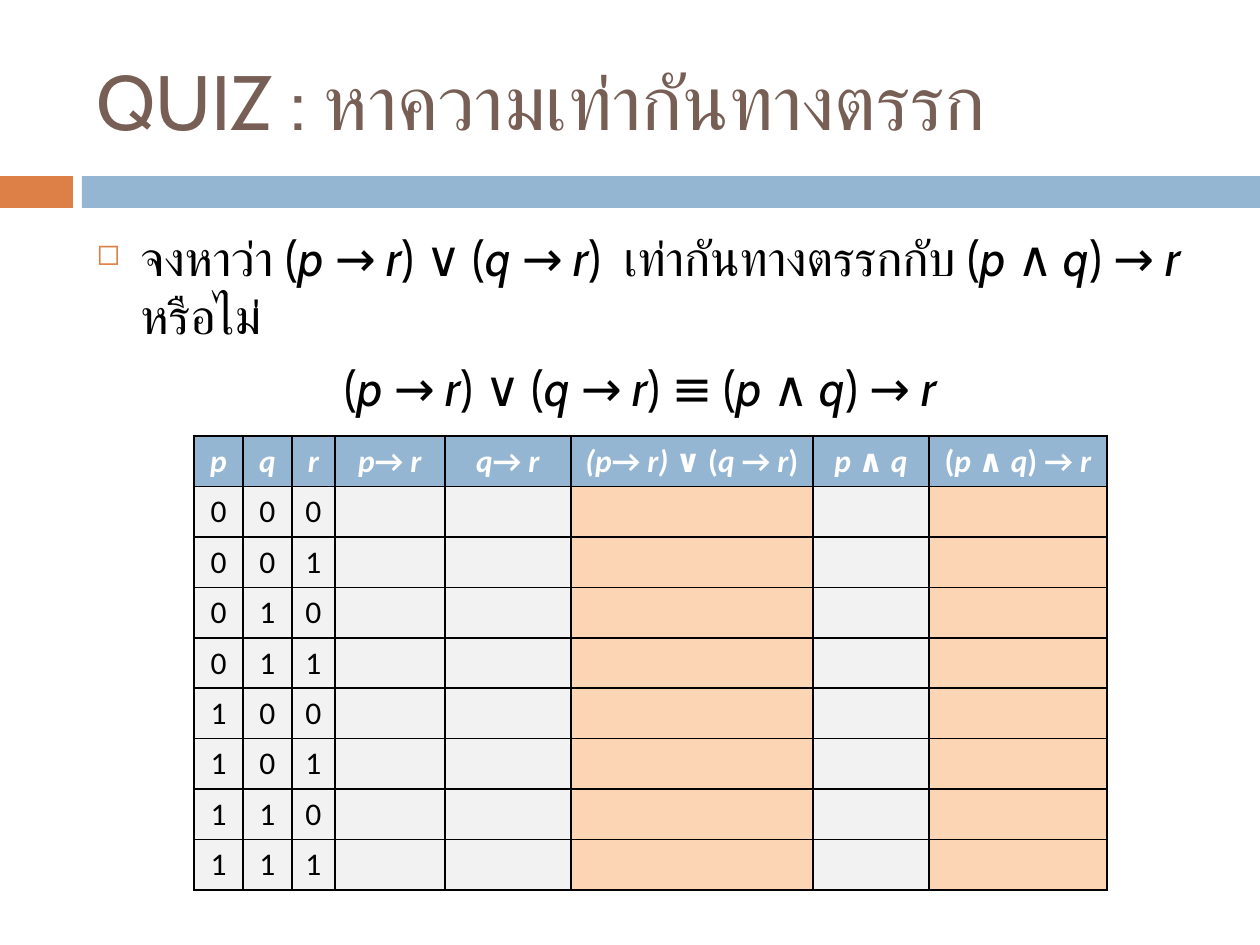
from dataclasses import dataclass
from itertools import product

from lxml import etree
from pptx import Presentation
from pptx.dml.color import RGBColor
from pptx.enum.shapes import MSO_SHAPE
from pptx.enum.text import MSO_ANCHOR, PP_ALIGN
from pptx.oxml.ns import qn
from pptx.util import Emu, Pt

RECTANGLE = MSO_SHAPE.RECTANGLE
LEFT, CENTER = PP_ALIGN.LEFT, PP_ALIGN.CENTER
TOP, MIDDLE = MSO_ANCHOR.TOP, MSO_ANCHOR.MIDDLE
PX_PER_INCH = 126
BLANK_LAYOUT = 6


@dataclass(frozen=True)
class Theme:
    orange: str = "DD8047"
    blue: str = "94B6D2"
    brown: str = "775F55"
    black: str = "000000"
    white: str = "FFFFFF"
    gray: str = "F2F2F2"
    peach: str = "FCD5B5"
    slide_font: str = "Cabin"
    table_font: str = "Calibri"
    title_size: int = 44
    body_size: int = 28
    table_size: int = 18
    border_width: int = 1


@dataclass(frozen=True)
class Box:
    left: int
    top: int
    width: int
    height: int


@dataclass(frozen=True)
class Bar:
    box: Box
    color: str


@dataclass(frozen=True)
class Column:
    header: str
    width: int
    fill: str


THEME = Theme()
BARS = (
    Bar(Box(0, 176, 73, 32), THEME.orange),
    Bar(Box(82, 176, 1178, 32), THEME.blue),
)
TITLE_BOX = Box(84, 32, 1124, 136)
BODY_BOX = Box(84, 221, 1124, 620)
TABLE_LEFT, TABLE_TOP, ROW_HEIGHT = 194, 436, 50
BULLET_INDENT = 44

# Asterisks enclose italic text
TITLE = "QUIZ : หาความเท่ากันทางตรรก"
DISJUNCTION = "(*p *→ *r*) ∨ (*q *→ *r*)"
IMPLICATION = "(*p *∧ *q*) → *r *"
QUESTION = f"จงหาว่า {DISJUNCTION}  เท่ากันทางตรรกกับ {IMPLICATION}หรือไม่"
EQUIVALENCE = f"{DISJUNCTION} ≡ {IMPLICATION}"
COLUMNS = (
    Column("*p*", 49, THEME.gray),
    Column("*q*", 49, THEME.gray),
    Column("*r *", 43, THEME.gray),
    Column("*p*→ *r*", 110, THEME.gray),
    Column("*q*→ *r*", 126, THEME.gray),
    Column("*(p*→ *r)* ∨ (*q *→ *r*)", 242, THEME.peach),
    Column("*p *∧ *q*", 116, THEME.gray),
    Column(IMPLICATION, 178, THEME.peach),
)


def px(length: int) -> Emu:
    return Emu(round(length * 914400 / PX_PER_INCH))


def place(box: Box) -> tuple:
    return px(box.left), px(box.top), px(box.width), px(box.height)


def write_text(paragraph, text: str, *, size: int, color: str, font: str,
               bold: bool = False, align=LEFT, space_before: int = 0) -> None:
    paragraph.alignment = align
    paragraph.space_before = Pt(space_before)
    for index, part in enumerate(text.split("*")):
        if not part:
            continue
        run = paragraph.add_run()
        run.text = part
        run.font.size = Pt(size)
        run.font.name = font
        run.font.bold = bold
        run.font.italic = index % 2 == 1
        run.font.color.rgb = RGBColor.from_string(color)


def add_bullet(paragraph) -> None:
    properties = paragraph._p.get_or_add_pPr()
    properties.set("marL", str(px(BULLET_INDENT)))
    properties.set("indent", str(-px(BULLET_INDENT)))
    color = etree.SubElement(properties, qn("a:buClr"))
    etree.SubElement(color, qn("a:srgbClr"), val=THEME.orange)
    etree.SubElement(properties, qn("a:buSzPct"), val="60000")
    etree.SubElement(properties, qn("a:buChar"), char="◻")


def add_text_frame(slide, box: Box, anchor):
    text_frame = slide.shapes.add_textbox(*place(box)).text_frame
    text_frame.word_wrap = True
    text_frame.vertical_anchor = anchor
    return text_frame


def add_bar(slide, bar: Bar) -> None:
    shape = slide.shapes.add_shape(RECTANGLE, *place(bar.box))
    shape.shadow.inherit = False
    shape.fill.solid()
    shape.fill.fore_color.rgb = RGBColor.from_string(bar.color)
    shape.line.fill.background()


def format_cell(cell, fill: str) -> None:
    # Borders come before the fill in the cell properties
    properties = cell._tc.get_or_add_tcPr()
    for side in ("a:lnL", "a:lnR", "a:lnT", "a:lnB"):
        line = etree.SubElement(properties, qn(side), w=str(Pt(THEME.border_width)))
        line_fill = etree.SubElement(line, qn("a:solidFill"))
        etree.SubElement(line_fill, qn("a:srgbClr"), val=THEME.black)
    cell.fill.solid()
    cell.fill.fore_color.rgb = RGBColor.from_string(fill)


def add_truth_table(slide) -> None:
    values = list(product("01", repeat=3))
    row_count = len(values) + 1
    box = Box(TABLE_LEFT, TABLE_TOP, sum(column.width for column in COLUMNS),
              row_count * ROW_HEIGHT)
    table = slide.shapes.add_table(row_count, len(COLUMNS), *place(box)).table
    table.horz_banding = False
    for index, column in enumerate(COLUMNS):
        table.columns[index].width = px(column.width)
        header = table.cell(0, index)
        format_cell(header, THEME.blue)
        write_text(header.text_frame.paragraphs[0], column.header,
                   size=THEME.table_size, color=THEME.white,
                   font=THEME.table_font, bold=True, align=CENTER)
        for row, inputs in enumerate(values, start=1):
            cell = table.cell(row, index)
            format_cell(cell, column.fill)
            if index < len(inputs):
                write_text(cell.text_frame.paragraphs[0], inputs[index],
                           size=THEME.table_size, color=THEME.black,
                           font=THEME.table_font, align=CENTER)


def main() -> None:
    presentation = Presentation()
    presentation.slide_width, presentation.slide_height = px(1260), px(945)
    slide = presentation.slides.add_slide(presentation.slide_layouts[BLANK_LAYOUT])

    # Divider bars
    for bar in BARS:
        add_bar(slide, bar)

    # Title
    title = add_text_frame(slide, TITLE_BOX, MIDDLE)
    write_text(title.paragraphs[0], TITLE, size=THEME.title_size,
               color=THEME.brown, font=THEME.slide_font)

    # Question and the equivalence to check
    body = add_text_frame(slide, BODY_BOX, TOP)
    body_format = dict(size=THEME.body_size, color=THEME.black,
                       font=THEME.slide_font, space_before=7)
    question = body.paragraphs[0]
    write_text(question, QUESTION, **body_format)
    add_bullet(question)
    write_text(body.add_paragraph(), EQUIVALENCE, align=CENTER, **body_format)

    # Truth table
    add_truth_table(slide)
    presentation.save("out.pptx")


if __name__ == "__main__":
    main()
